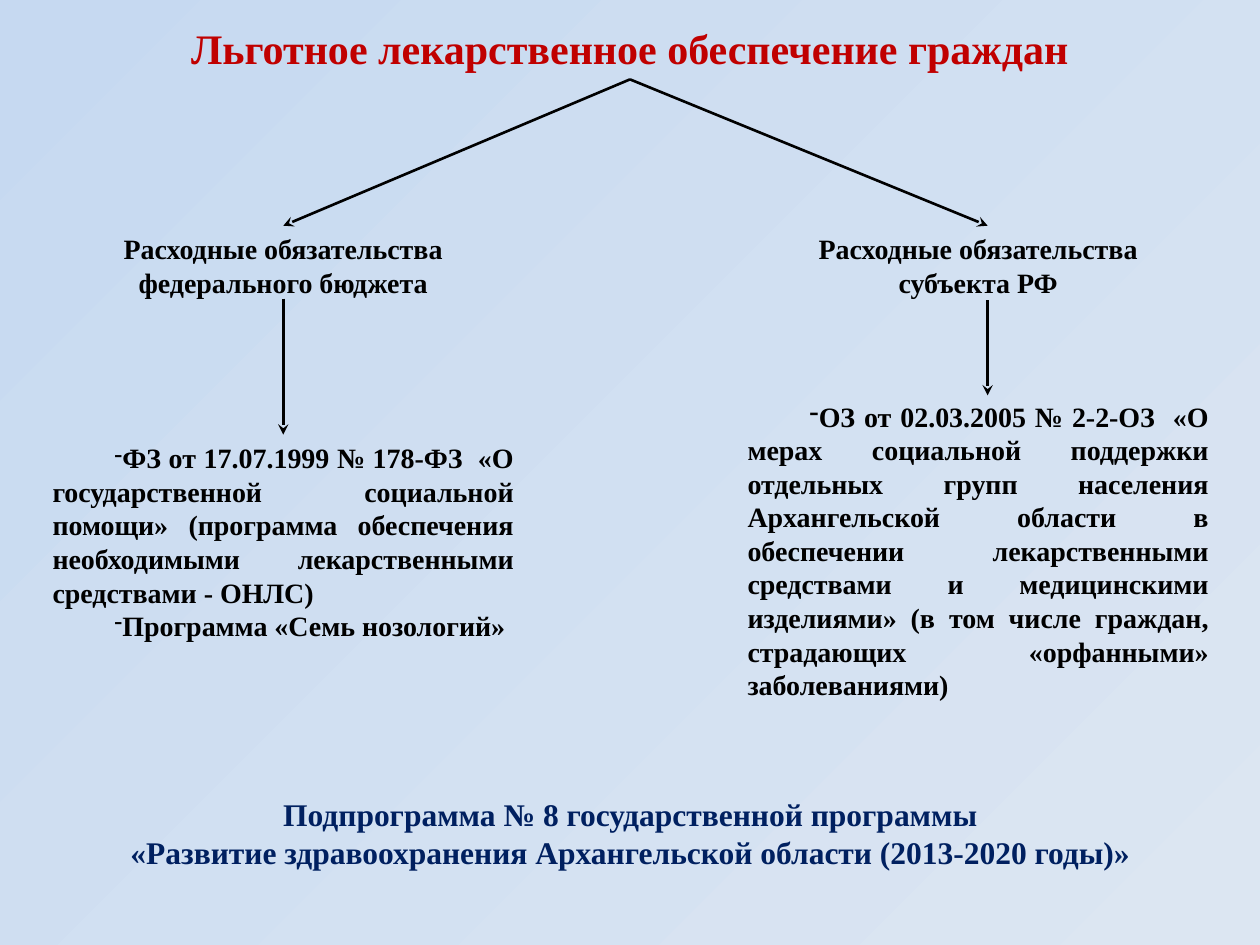
"""Build a slide on the funding of subsidised medicines for citizens."""
from lxml import etree
from pptx import Presentation
from pptx.dml.color import RGBColor
from pptx.enum.shapes import MSO_CONNECTOR
from pptx.enum.text import MSO_AUTO_SIZE, PP_ALIGN
from pptx.oxml import parse_xml
from pptx.oxml.ns import nsdecls, qn
from pptx.util import Cm, Pt

STRAIGHT = MSO_CONNECTOR.STRAIGHT
CENTER, JUSTIFY = PP_ALIGN.CENTER, PP_ALIGN.JUSTIFY
GROW, FIXED = MSO_AUTO_SIZE.SHAPE_TO_FIT_TEXT, MSO_AUTO_SIZE.NONE
TOP, BOTTOM = 0, 2
FONT = "Times New Roman"
COLORS = {
    "title": "C00000",
    "text": "000000",
    "program": "002060",
    "light": "DCE6F2",
    "sky": "C6D9F1",
}
SLIDE_WIDTH, SLIDE_HEIGHT = 25.4, 19.05
COLUMN_WIDTH = 9.8
LEFT, RIGHT = 0.81, 14.82
HEADING_TOP = 4.55
FEDERAL_LAWS = [
    "ФЗ от 17.07.1999 № 178-ФЗ  «О государственной социальной помощи» "
    "(программа обеспечения необходимыми лекарственными средствами - ОНЛС)",
    "Программа «Семь нозологий»",
]
REGIONAL_LAWS = [
    "ОЗ от 02.03.2005 № 2-2-ОЗ  «О мерах социальной поддержки отдельных групп "
    "населения Архангельской области в обеспечении лекарственными средствами и "
    "медицинскими изделиями» (в том числе граждан, страдающих «орфанными» "
    "заболеваниями)",
]


def set_background(slide):
    """Fill the slide with a radial gradient centred on the lower right corner."""
    slide.element.cSld.insert(0, parse_xml(
        f'<p:bg {nsdecls("p", "a")}><p:bgPr><a:gradFill rotWithShape="1"><a:gsLst>'
        f'<a:gs pos="0"><a:srgbClr val="{COLORS["light"]}"><a:alpha val="60000"/>'
        f'</a:srgbClr></a:gs><a:gs pos="100000"><a:srgbClr val="{COLORS["sky"]}"/>'
        '</a:gs></a:gsLst><a:path path="circle"><a:fillToRect l="100000" t="100000"/>'
        '</a:path></a:gradFill><a:effectLst/></p:bgPr></p:bg>'))


def add_text(slide, box, lines, size, color="text", align=CENTER, fit=FIXED):
    """Add a wrapped text box with one bold paragraph per line."""
    shape = slide.shapes.add_textbox(*map(Cm, box))
    frame = shape.text_frame
    frame.word_wrap = True
    frame.auto_size = fit
    for index, line in enumerate(lines):
        paragraph = frame.add_paragraph() if index else frame.paragraphs[0]
        paragraph.alignment = align
        run = paragraph.add_run()
        run.text = line
        run.font.name = FONT
        run.font.size = Pt(size)
        run.font.bold = True
        run.font.color.rgb = RGBColor.from_string(COLORS[color])
    return shape


def add_law_list(slide, box, laws, bullet_percent=100):
    """Add a justified list with dashes and an indented first line."""
    shape = add_text(slide, box, laws, 16, align=JUSTIFY)
    for paragraph in shape.text_frame.paragraphs:
        properties = paragraph._p.get_or_add_pPr()
        properties.set("marL", "0")
        properties.set("indent", str(Cm(1.25)))
        etree.SubElement(properties, qn("a:buSzPct"), val=str(bullet_percent * 1000))
        etree.SubElement(properties, qn("a:buFontTx"))
        etree.SubElement(properties, qn("a:buChar"), char="-")
    return shape


def add_arrow(slide, start, end, source=None, target=None):
    """Add an arrow, joined to the source's bottom and the target's top if given."""
    connector = slide.shapes.add_connector(STRAIGHT, *map(Cm, start + end))
    if source is not None:
        connector.begin_connect(source, BOTTOM)
    if target is not None:
        connector.end_connect(target, TOP)
    connector.line.width = Pt(1.5)
    connector.line.color.rgb = RGBColor.from_string(COLORS["text"])
    etree.SubElement(connector.line._get_or_add_ln(), qn("a:tailEnd"), type="stealth")
    etree.SubElement(connector._element.spPr, qn("a:effectLst"))


def main():
    """Compose and save the slide."""
    presentation = Presentation()
    presentation.slide_width = Cm(SLIDE_WIDTH)
    presentation.slide_height = Cm(SLIDE_HEIGHT)
    slide = presentation.slides.add_slide(presentation.slide_layouts[6])
    set_background(slide)

    title = add_text(slide, (0, 0.33, SLIDE_WIDTH, 1.27),
                     ["Льготное лекарственное обеспечение граждан"],
                     24, "title", fit=GROW)
    federal, regional = [
        add_text(slide, (left, HEADING_TOP, COLUMN_WIDTH, 1.62),
                 ["Расходные обязательства", budget], 16, fit=GROW)
        for left, budget in ((LEFT, "федерального бюджета"), (RIGHT, "субъекта РФ"))
    ]
    federal_laws = add_law_list(slide, (LEFT, 8.76, COLUMN_WIDTH, 4.57), FEDERAL_LAWS, 85)
    add_law_list(slide, (RIGHT, 7.92, COLUMN_WIDTH, 6.27), REGIONAL_LAWS)
    add_text(slide, (LEFT, 15.9, 23.8, 1.7),
             ["Подпрограмма № 8 государственной программы",
              "«Развитие здравоохранения Архангельской области (2013-2020 годы)»"],
             18, "program")

    center, federal_x, regional_x = SLIDE_WIDTH / 2, LEFT + COLUMN_WIDTH / 2, 19.91
    add_arrow(slide, (center, 1.6), (federal_x, HEADING_TOP), title, federal)
    add_arrow(slide, (center, 1.6), (regional_x, HEADING_TOP), title)
    add_arrow(slide, (federal_x, 6.02), (federal_x, 8.76), target=federal_laws)
    add_arrow(slide, (regional_x, 6.05), (regional_x, 7.97))
    presentation.save("out.pptx")


if __name__ == "__main__":
    main()
